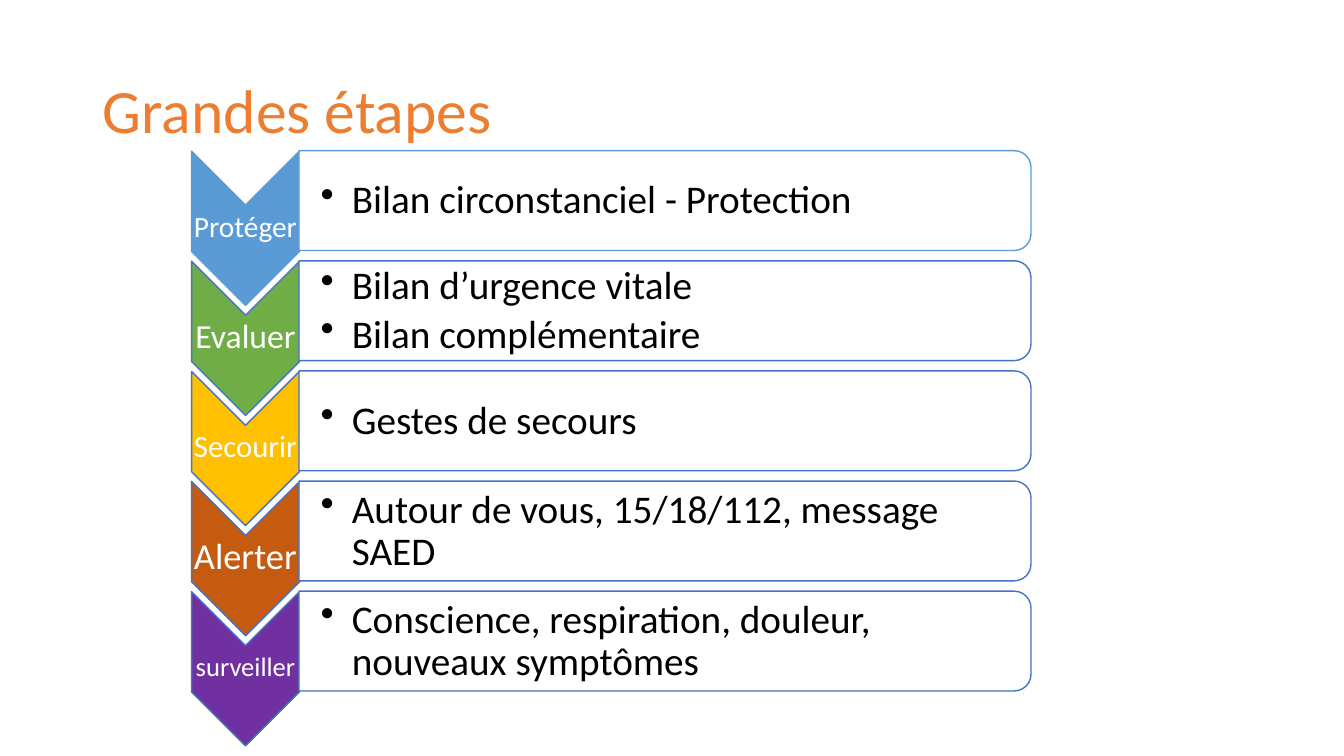
from dataclasses import dataclass

from lxml.etree import SubElement
from pptx import Presentation
from pptx.dml.color import RGBColor
from pptx.enum.shapes import MSO_SHAPE as Preset
from pptx.enum.text import MSO_ANCHOR as Anchor, PP_ALIGN as Align
from pptx.oxml.ns import qn
from pptx.shapes.autoshape import Shape
from pptx.slide import Slide
from pptx.text.text import TextFrame
from pptx.util import Inches, Pt

FONT = "Calibri"
WHITE = RGBColor(0xFF, 0xFF, 0xFF)
BLACK = RGBColor(0x00, 0x00, 0x00)
ORANGE = RGBColor(0xED, 0x7D, 0x31)
SKY = RGBColor(0x5B, 0x9B, 0xD5)
BLUE = RGBColor(0x44, 0x72, 0xC4)
GREEN = RGBColor(0x70, 0xAD, 0x47)
GOLD = RGBColor(0xFF, 0xC0, 0x00)
RUST = RGBColor(0xC5, 0x5A, 0x11)
PURPLE = RGBColor(0x70, 0x30, 0xA0)

FIRST_TOP = 1.73
LAST_TOP = 6.10


@dataclass(frozen=True)
class Step:
    label: str
    label_size: int
    fill: RGBColor
    line: RGBColor
    details: tuple[str, ...]


STEPS = (
    Step("Protéger", 21, SKY, SKY, ("Bilan circonstanciel - Protection",)),
    Step("Evaluer", 24, GREEN, BLUE, ("Bilan d’urgence vitale", "Bilan complémentaire")),
    Step("Secourir", 22, GOLD, BLUE, ("Gestes de secours",)),
    Step("Alerter", 26, RUST, BLUE, ("Autour de vous, 15/18/112, message SAED",)),
    Step("surveiller", 19, PURPLE, BLUE,
         ("Conscience, respiration, douleur, nouveaux symptômes",)),
)


def write_text(frame: TextFrame, *texts: str, size: int, color: RGBColor,
               align: Align = Align.LEFT, after: float = 0, bullet: bool = False) -> None:
    frame.vertical_anchor = Anchor.MIDDLE
    for index, text in enumerate(texts):
        para = frame.add_paragraph() if index else frame.paragraphs[0]
        para.alignment = align
        para.line_spacing = 0.9
        para.space_before = Pt(0)
        para.space_after = Pt(size * after)
        if bullet:
            para.level = 1
            properties = para._p.get_or_add_pPr()
            properties.set("marL", str(Inches(0.31)))
            properties.set("indent", str(-Inches(0.31)))
            SubElement(properties, qn("a:buChar"), char="•")
        span = para.add_run()
        span.text = text
        span.font.name = FONT
        span.font.size = Pt(size)
        span.font.color.rgb = color


def add_frame(page: Slide, left: float, top: float, width: float, height: float,
              left_inset: float = 0.02, wrap: bool = True) -> TextFrame:
    box = page.shapes.add_textbox(Inches(left), Inches(top), Inches(width), Inches(height))
    frame = box.text_frame
    frame.word_wrap = wrap
    frame.margin_left = Inches(left_inset)
    frame.margin_top = frame.margin_right = frame.margin_bottom = Inches(0.02)
    return frame


def add_turned_shape(page: Slide, preset: Preset, left: float, top: float, width: float,
                     height: float, fill: RGBColor, line: RGBColor) -> Shape:
    shape = page.shapes.add_shape(preset, Inches(left), Inches(top),
                                  Inches(width), Inches(height))
    shape.rotation = 90
    shape.shadow.inherit = False
    shape.fill.solid()
    shape.fill.fore_color.rgb = fill
    shape.line.color.rgb = line
    shape.line.width = Pt(1)
    return shape


def add_step(page: Slide, step: Step, top: float) -> None:
    add_turned_shape(page, Preset.CHEVRON, 1.67, top, 1.53, 1.07, step.fill, step.line)
    label = add_frame(page, 1.9, top + 0.3, 1.07, 0.46, wrap=False)
    write_text(label, step.label, size=step.label_size, color=WHITE,
               align=Align.CENTER, after=0.35)
    panel = add_turned_shape(page, Preset.ROUND_2_SAME_RECTANGLE, 6.1, top - 3.37,
                             0.99, 7.26, WHITE, step.line)
    panel_color = panel._element.spPr.find(qn("a:solidFill"))[0]
    SubElement(panel_color, qn("a:alpha"), val="90000")
    details = add_frame(page, 2.96, top - 0.18, 7.21, 0.89, left_inset=0.22)
    write_text(details, *step.details, size=28, color=BLACK, after=0.15, bullet=True)


def main() -> None:
    deck = Presentation()
    deck.slide_width, deck.slide_height = Inches(13.33), Inches(7.5)
    page = deck.slides.add_slide(deck.slide_layouts[5])
    title = page.shapes.title
    title.left, title.top = Inches(0.92), Inches(0.4)
    title.width, title.height = Inches(11.5), Inches(1.45)
    write_text(title.text_frame, "Grandes étapes", size=44, color=ORANGE)
    pitch = (LAST_TOP - FIRST_TOP) / (len(STEPS) - 1)
    for index, step in enumerate(STEPS):
        add_step(page, step, FIRST_TOP + index * pitch)
    deck.save("out.pptx")


if __name__ == "__main__":
    main()
